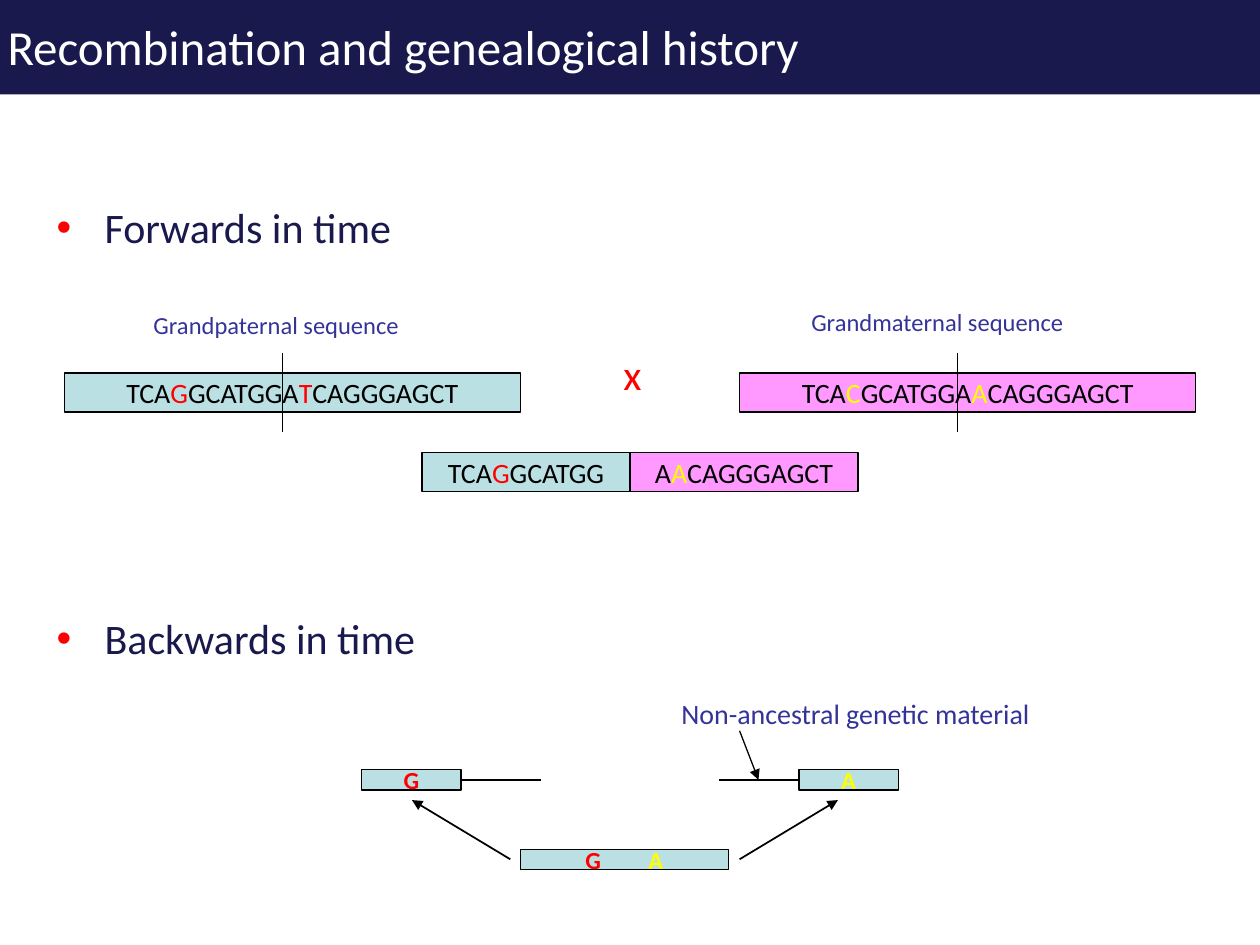
from lxml import etree
from pptx import Presentation
from pptx.dml.color import RGBColor
from pptx.enum.shapes import MSO_CONNECTOR, MSO_SHAPE
from pptx.enum.text import MSO_ANCHOR, MSO_AUTO_SIZE, PP_ALIGN
from pptx.oxml.ns import qn
from pptx.util import Inches, Pt

STRAIGHT = MSO_CONNECTOR.STRAIGHT
RECT = MSO_SHAPE.RECTANGLE
MIDDLE = MSO_ANCHOR.MIDDLE
NO_FIT, GROW = MSO_AUTO_SIZE.NONE, MSO_AUTO_SIZE.SHAPE_TO_FIT_TEXT
LEFT, CENTER = PP_ALIGN.LEFT, PP_ALIGN.CENTER

COLORS = {
    "navy": "19194D", "label": "333399", "white": "FFFFFF", "black": "000000",
    "paternal": "BBE0E3", "maternal": "FF99FF", "red": "FF0000", "yellow": "FFFF00",
}
SIDE_LEFT, SIDE_RIGHT = 1, 3


def rgb(name):
    return RGBColor.from_string(COLORS[name])


class SlideBuilder:
    font = "Calibri"

    def __init__(self, slide):
        self.s = slide

    def place(self, sp, box):
        for name, value in zip(("left", "top", "width", "height"), box):
            setattr(sp, name, Inches(value))

    def frame(self, sp, **fmt):
        for name, value in fmt.items():
            setattr(sp.text_frame, name, value)
        return sp.text_frame

    def add_runs(self, p, runs, size, bold=None):
        """Fill a paragraph from (text, colour) pairs."""
        for text, color in runs:
            r = p.add_run()
            r.text = text
            fmt = {"name": self.font, "size": Pt(size), "bold": bold}
            for name, value in fmt.items():
                setattr(r.font, name, value)
            r.font.color.rgb = rgb(color)

    def title(self, text, box):
        sp = self.s.shapes.title
        self.place(sp, box)
        sp.fill.solid()
        sp.fill.fore_color.rgb = rgb("navy")
        tf = self.frame(sp, vertical_anchor=MIDDLE, auto_size=NO_FIT)
        tf.paragraphs[0].alignment = LEFT
        self.add_runs(tf.paragraphs[0], [(text, "white")], 28)

    def bullets(self, items, box):
        """Fill the body from (text, points before) pairs."""
        sp = self.s.placeholders[1]
        self.place(sp, box)
        tf = self.frame(sp, auto_size=NO_FIT)
        for i, (text, before) in enumerate(items):
            p = tf.add_paragraph() if i else tf.paragraphs[0]
            p.space_before = Pt(before)
            self.add_runs(p, [(text, "navy")], 24)
            pPr = p._p.get_or_add_pPr()
            pPr.set("marL", str(Inches(0.38)))
            pPr.set("indent", str(Inches(-0.38)))
            clr = etree.SubElement(pPr, qn("a:buClr"))
            etree.SubElement(clr, qn("a:srgbClr"), val=COLORS["red"])
            etree.SubElement(pPr, qn("a:buFont"), typeface="Arial")
            etree.SubElement(pPr, qn("a:buChar"), char="•")

    def label(self, text, box, size, color="label"):
        sp = self.s.shapes.add_textbox(*map(Inches, box))
        tf = self.frame(sp, word_wrap=False, auto_size=GROW)
        self.add_runs(tf.paragraphs[0], [(text, color)], size)

    def sequence(self, runs, box, fill, size=16, bold=None):
        sp = self.s.shapes.add_shape(RECT, *map(Inches, box))
        sp.shadow.inherit = False
        sp.fill.solid()
        sp.fill.fore_color.rgb = rgb(fill)
        sp.line.color.rgb = rgb("black")
        sp.line.width = Pt(0.75)
        tf = self.frame(sp, word_wrap=False, vertical_anchor=MIDDLE)
        tf.paragraphs[0].alignment = CENTER
        self.add_runs(tf.paragraphs[0], runs, size, bold)
        return sp

    def line(self, start, end, width=0.75, arrow=False):
        cx = self.s.shapes.add_connector(STRAIGHT, *map(Inches, (*start, *end)))
        cx.line.color.rgb = rgb("black")
        cx.line.width = Pt(width)
        spPr = cx._element.spPr
        if arrow:
            etree.SubElement(spPr.find(qn("a:ln")), qn("a:tailEnd"), type="triangle")
        etree.SubElement(spPr, qn("a:effectLst"))
        return cx


def main():
    prs = Presentation()
    prs.slide_width, prs.slide_height = Inches(10), Inches(7.5)
    b = SlideBuilder(prs.slides.add_slide(prs.slide_layouts[1]))

    b.title("Recombination and genealogical history", (-0.04, -0.02, 10.04, 0.77))
    b.bullets([("Forwards in time", 4.8), ("Backwards in time", 206)],
              (0.35, 1.55, 9, 4.95))

    # Forwards: two grandparental sequences cross over into one
    grandparents = [(0.51, "paternal", "G", "T", "red"),
                    (5.87, "maternal", "C", "A", "yellow")]
    for x, fill, first, second, color in grandparents:
        runs = [("TCA", "black"), (first, color), ("GCATGGA", "black"),
                (second, color), ("CAGGGAGCT", "black")]
        b.sequence(runs, (x, 2.96, 3.62, 0.31), fill)
        b.line((x + 1.73, 2.8), (x + 1.73, 3.43))
    b.label("Grandpaternal sequence", (1.12, 2.41, 2.33, 0.33), 14)
    b.label("Grandmaternal sequence", (6.34, 2.39, 2.39, 0.33), 14)
    b.label("x", (4.85, 2.72, 0.37, 0.5), 24, "red")
    b.sequence([("TCA", "black"), ("G", "red"), ("GCATGG", "black")],
               (3.35, 3.59, 1.65, 0.31), "paternal")
    b.sequence([("A", "black"), ("A", "yellow"), ("CAGGGAGCT", "black")],
               (5, 3.59, 1.81, 0.31), "maternal")

    # Backwards: one sequence traces to two ancestors
    b.sequence([("G\t", "red"), ("A", "yellow")], (4.13, 6.74, 1.65, 0.16),
               "paternal", 14, True)
    ancestors = [(2.87, "G", "red", SIDE_RIGHT, 3.66, 4.29, 4.05, 3.27),
                 (6.34, "A", "yellow", SIDE_LEFT, 6.34, 5.71, 5.87, 6.65)]
    for x, base, color, side, near, far, child_x, parent_x in ancestors:
        sp = b.sequence([(base, color)], (x, 6.11, 0.79, 0.16), "paternal", 14, True)
        b.line((near, 6.19), (far, 6.19)).begin_connect(sp, side)
        b.line((child_x, 6.82), (parent_x, 6.35), 1, arrow=True)
    b.label("Non-ancestral genetic material", (5.31, 5.48, 3.21, 0.37), 16)
    b.line((5.87, 5.8), (6.02, 6.19), arrow=True)

    prs.save("out.pptx")


if __name__ == "__main__":
    main()
